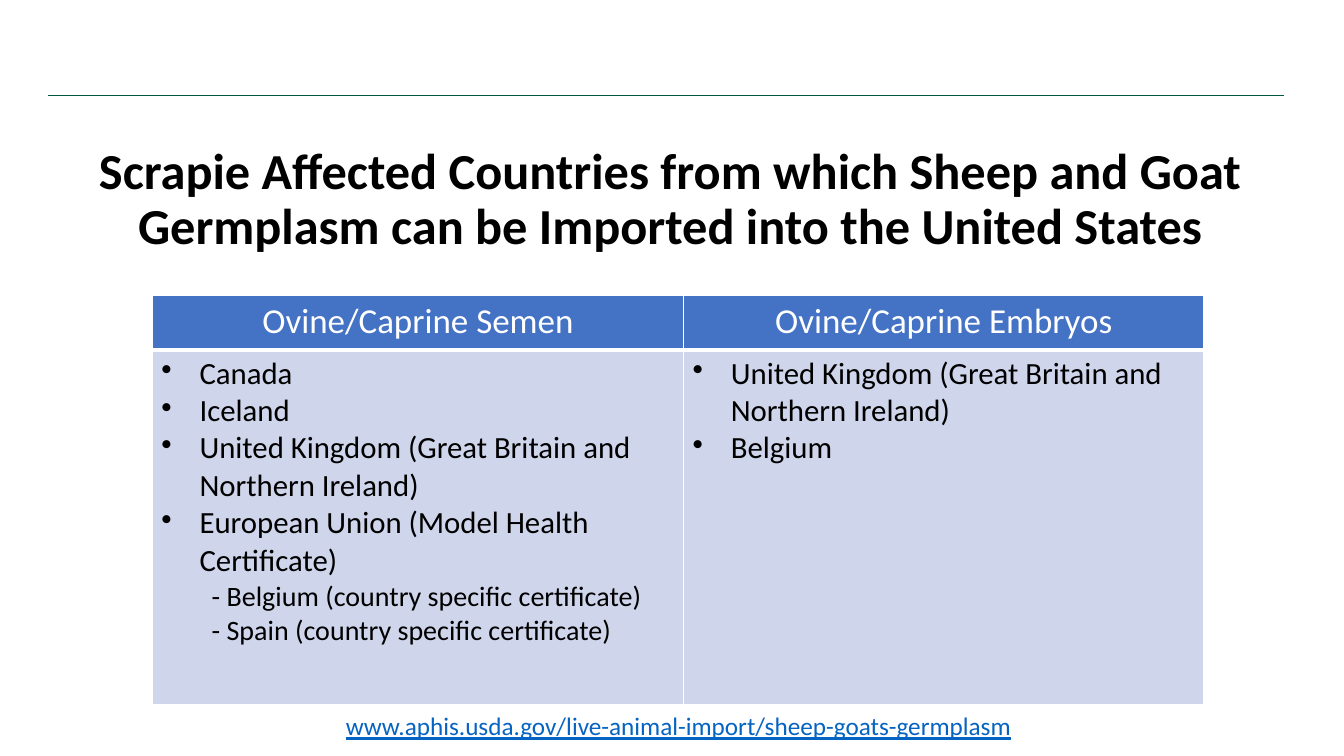
"""Build the slide on scrapie affected countries and germplasm imports."""
from dataclasses import dataclass

from pptx import Presentation
from pptx import util as u
from pptx.dml.color import RGBColor
from pptx.enum import shapes, text
from pptx.oxml import parse_xml
from pptx.oxml.ns import nsdecls


@dataclass(frozen=True)
class Theme:
    """Colours, font and type sizes of the deck."""
    font: str = "Calibri"
    ink: str = "000000"
    white: str = "FFFFFF"
    rule: str = "005941"
    header: str = "4472C4"
    body: str = "CFD5EA"
    link: str = "0563C1"
    title_size: int = 36
    header_size: int = 25
    item_size: int = 22
    detail_size: int = 20
    link_size: int = 18


class SlideBuilder:
    """Draws styled elements on the current slide."""

    def __init__(self, page, theme):
        """Keep the slide and its style."""
        self.page = page
        self.theme = theme

    def add_span(self, para, words, size, color, **formats):
        """Fill a paragraph with one formatted span."""
        span = para.add_run()
        span.text = words
        values = {"name": self.theme.font, "size": u.Pt(size), "bold": False, **formats}
        for name, value in values.items():
            setattr(span.font, name, value)
        span.font.color.rgb = RGBColor.from_string(color)

    def rule(self, left, right, top):
        """Draw a thin horizontal line."""
        line = self.page.shapes.add_connector(
            shapes.MSO_CONNECTOR.STRAIGHT,
            u.Inches(left), u.Inches(top), u.Inches(right), u.Inches(top))
        line.line.width = u.Pt(0.5)
        line.line.color.rgb = RGBColor.from_string(self.theme.rule)
        line._element.spPr.append(parse_xml(f"<a:effectLst {nsdecls('a')}/>"))

    def centred_text(self, area, words, size, color, spacing=1.0, **formats):
        """Place a centred paragraph in a wrapping box."""
        box = self.page.shapes.add_textbox(*map(u.Inches, area))
        box.text_frame.word_wrap = True
        para = box.text_frame.paragraphs[0]
        para.alignment = text.PP_ALIGN.CENTER
        para.line_spacing = spacing
        self.add_span(para, words, size, color, **formats)

    def indent(self, para, margin, hanging, bullet):
        """Set the indents of a paragraph and its bullet, if any."""
        properties = para._p.get_or_add_pPr()
        properties.set("marL", str(u.Inches(margin)))
        properties.set("indent", str(-u.Inches(hanging)))
        mark = f'<a:buChar {nsdecls("a")} char="•"/>' if bullet else f'<a:buNone {nsdecls("a")}/>'
        properties.append(parse_xml(mark))

    def paint_cell(self, cell, fill, bottom):
        """Set the borders, insets and fill of a table cell."""
        properties = cell._tc.get_or_add_tcPr()
        for side, points in {"L": 1, "R": 1, "T": 1, "B": bottom}.items():
            properties.append(parse_xml(
                f'<a:ln{side} {nsdecls("a")} w="{u.Pt(points)}"><a:solidFill>'
                f'<a:srgbClr val="{self.theme.white}"/></a:solidFill></a:ln{side}>'))
        insets = {"margin_left": 0.09, "margin_right": 0.09,
                  "margin_top": 0.05, "margin_bottom": 0.05}
        for name, value in insets.items():
            setattr(cell, name, u.Inches(value))
        cell.fill.solid()
        cell.fill.fore_color.rgb = RGBColor.from_string(fill)

    def list_table(self, area, widths, heights, columns):
        """Add a table with a heading and a list in each column."""
        theme = self.theme
        table = self.page.shapes.add_table(2, len(columns), *map(u.Inches, area)).table
        table.first_row = table.horz_banding = False
        for row, height in zip(table.rows, heights):
            row.height = u.Inches(height)
        for index, (heading, items) in enumerate(columns.items()):
            table.columns[index].width = u.Inches(widths[index])
            head, body = table.cell(0, index), table.cell(1, index)
            self.paint_cell(head, theme.header, 3)
            self.paint_cell(body, theme.body, 1)
            para = head.text_frame.paragraphs[0]
            para.alignment = text.PP_ALIGN.CENTER
            self.add_span(para, heading, theme.header_size, theme.white)
            for place, item in enumerate(items):
                frame = body.text_frame
                para = frame.add_paragraph() if place else frame.paragraphs[0]
                if item.startswith("-"):
                    para.level = 1
                    self.indent(para, 0.5, 0, False)
                    self.add_span(para, item, theme.detail_size, theme.ink)
                else:
                    self.indent(para, 0.38, 0.38, True)
                    self.add_span(para, item, theme.item_size, theme.ink)


def main():
    """Build and save the deck."""
    deck = Presentation()
    deck.slide_width, deck.slide_height = u.Inches(13.33), u.Inches(7.5)
    theme = Theme()
    builder = SlideBuilder(deck.slides.add_slide(deck.slide_layouts[6]), theme)
    builder.rule(0.48, 12.73, 0.95)
    builder.centred_text(
        (0.05, 1.4, 13.2, 1.04),
        "Scrapie Affected Countries from which Sheep and Goat "
        "Germplasm can be Imported into the United States",
        theme.title_size, theme.ink, spacing=0.9, bold=True)
    kingdom = "United Kingdom (Great Britain and Northern Ireland)"
    builder.list_table((1.51, 2.93, 10.43, 4.06), (5.27, 5.16), (0.54, 3.52), {
        "Ovine/Caprine Semen": [
            "Canada", "Iceland", kingdom,
            "European Union (Model Health Certificate)",
            "- Belgium (country specific certificate)",
            "- Spain (country specific certificate)"],
        "Ovine/Caprine Embryos": [kingdom, "Belgium"],
    })
    builder.centred_text(
        (2.39, 7, 8.68, 0.4),
        "www.aphis.usda.gov/live-animal-import/sheep-goats-germplasm",
        theme.link_size, theme.link, underline=True)
    deck.save("out.pptx")


if __name__ == "__main__":
    main()
